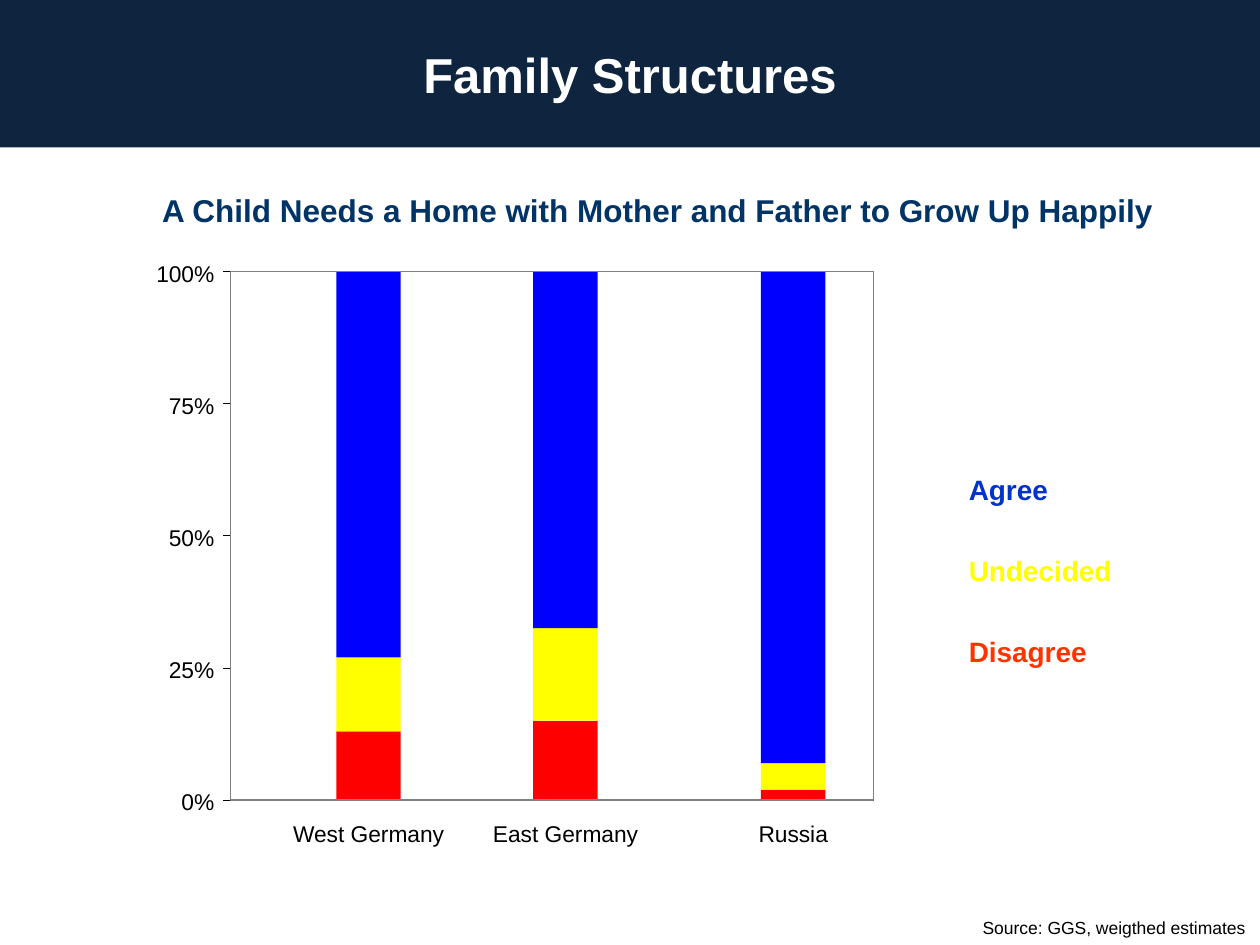
"""Build the Family Structures slide with its stacked bars."""
from pptx import Presentation
from pptx import util as u
from pptx.dml.color import RGBColor
from pptx.enum import shapes, text
from pptx.oxml.ns import qn

Cm, Pt = u.Cm, u.Pt
Al = text.PP_ALIGN
hues = {
    "band": "0F243E", "white": "FFFFFF", "head": "003366", "black": "000000",
    "frame": "808080", "red": "FF0000", "yellow": "FFFF00", "blue": "0000FF",
    "agree": "0033CC", "disagree": "FF3300",
}
color = {name: RGBColor.from_string(code) for name, code in hues.items()}

deck = Presentation()
deck.slide_width, deck.slide_height = Cm(25.4), Cm(19.05)
slide = deck.slides.add_slide(deck.slide_layouts[5])
items = slide.shapes


def label(words, x, y, w, h, size, hue="black", bold=False, align=Al.LEFT, pad=(0, 0)):
    box = items.add_textbox(Cm(x), Cm(y), Cm(w), Cm(h))
    frame = box.text_frame
    frame.word_wrap = False
    frame.margin_left = frame.margin_right = Cm(pad[0])
    frame.margin_top = frame.margin_bottom = Cm(pad[1])
    frame.text = words
    line = frame.paragraphs[0]
    line.alignment = align
    font = line.runs[0].font
    font.name, font.size, font.bold = "Arial", Pt(size), bold
    font.color.rgb = color[hue]


def rule(x1, y1, x2, y2):
    line = items.add_connector(
        shapes.MSO_CONNECTOR.STRAIGHT, Cm(x1), Cm(y1), Cm(x2), Cm(y2))
    line.line.color.rgb = color["black"]
    line.line.width = Pt(0.25)
    props = line._element.spPr
    props.append(props.makeelement(qn("a:effectLst"), {}))


title = items.title
title.left, title.top, title.width, title.height = 0, 0, deck.slide_width, Cm(2.97)
title.fill.solid()
title.fill.fore_color.rgb = color["band"]
title.line.fill.background()
title.text_frame.text = "Family Structures"
title.text_frame.vertical_anchor = text.MSO_ANCHOR.MIDDLE
title.text_frame.paragraphs[0].alignment = Al.CENTER
font = title.text_frame.paragraphs[0].runs[0].font
font.name, font.size, font.bold = "Arial", Pt(28), True
font.color.rgb = color["white"]

label("A Child Needs a Home with Mother and Father to Grow Up Happily",
      3.02, 3.73, 20.7, 1.02, 18, "head", True, pad=(0.25, 0.13))
label("Source: GGS, weigthed estimates", 19.56, 18.36, 5.79, 0.69, 10,
      align=Al.CENTER, pad=(0.1, 0.13))

left, top, width, height = 4.65, 5.47, 12.96, 10.66
base = top + height
thick = 1.3
bars = [
    ("West Germany", 6.78, 3.4, (13, 14, 73)),
    ("East Germany", 10.75, 3.3, (15, 17.5, 67.5)),
    ("Russia", 15.34, 1.7, (2, 5, 93)),
]
for name, x, wide, shares in bars:
    y = base
    for share, hue in zip(shares, ("red", "yellow", "blue")):
        tall = height * share / 100
        y -= tall
        part = items.add_shape(
            shapes.MSO_SHAPE.RECTANGLE, Cm(x), Cm(y), Cm(thick), Cm(tall))
        part.shadow.inherit = False
        part.fill.solid()
        part.fill.fore_color.rgb = color[hue]
        part.line.fill.background()
    label(name, x + (thick - wide) / 2, 16.53, wide, 0.56, 13, align=Al.CENTER)

rule(left, top, left, base)
rule(left, base, left + width, base)
for mark in range(0, 101, 25):
    y = base - height * mark / 100
    rule(left - 0.15, y, left, y)
    label(f"{mark}%", 2.92, y - 0.24, 1.4, 0.56, 13, align=Al.RIGHT)

plot = items.add_shape(
    shapes.MSO_SHAPE.RECTANGLE, Cm(left), Cm(top), Cm(width), Cm(height))
plot.shadow.inherit = False
plot.fill.background()
plot.line.color.rgb = color["frame"]
plot.line.width = Pt(0.75)

keys = [("Agree", "agree"), ("Undecided", "yellow"), ("Disagree", "disagree")]
for row, (name, hue) in enumerate(keys):
    label(name, 19.53, 9.53 + 1.63 * row, 3.2, 0.69, 16, hue, True)

deck.save("out.pptx")
